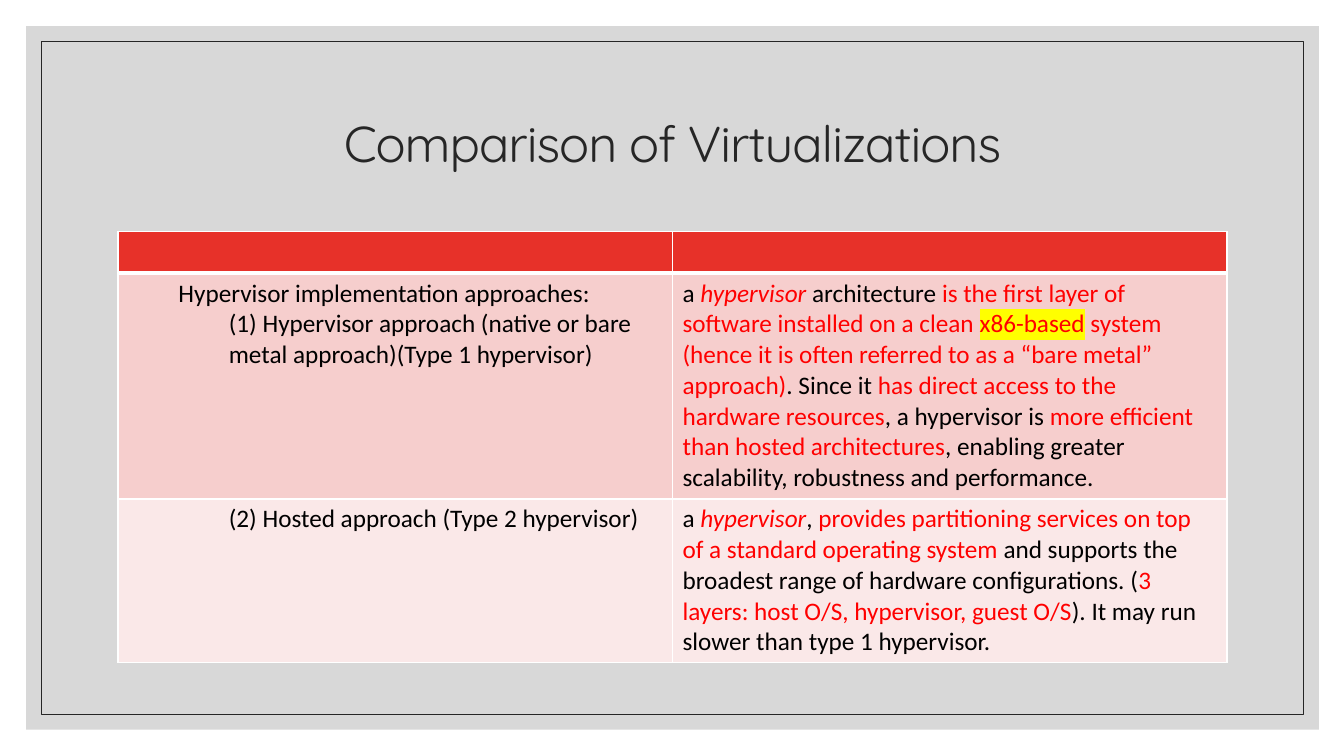
from dataclasses import dataclass

from lxml.etree import SubElement
from pptx import Presentation
from pptx.dml.color import RGBColor
from pptx.enum.shapes import MSO_SHAPE
from pptx.enum.text import MSO_ANCHOR, PP_ALIGN
from pptx.oxml.ns import qn
from pptx.util import Inches, Pt


@dataclass(frozen=True)
class Theme:
    """Colours, fonts and type sizes of the slide."""

    panel: str = "BFBFBF"
    ink: str = "262626"
    body: str = "000000"
    accent: str = "FF0000"
    highlight: str = "FFFF00"
    border: str = "FFFFFF"
    header_fill: str = "E73129"
    row_fills: tuple = ("F6CECD", "FAE8E8")
    title_font: str = "Quicksand"
    body_font: str = "Calibri"
    title_size: int = 36
    body_size: int = 18


PLAIN, RED, ITALIC, MARKED = "plain", "red", "italic", "marked"

APPROACHES = [
    (
        [
            (0.5, [("Hypervisor implementation approaches:", PLAIN)]),
            (1, [("(1) Hypervisor approach (native or bare metal approach)(Type 1 hypervisor)", PLAIN)]),
        ],
        [
            (0, [
                ("a ", PLAIN),
                ("hypervisor ", ITALIC),
                ("architecture ", PLAIN),
                ("is the first layer of software installed on a clean ", RED),
                ("x86-based", MARKED),
                (" system (hence it is often referred to as a “bare metal” approach)", RED),
                (". Since it ", PLAIN),
                ("has direct access to the hardware resources", RED),
                (", a hypervisor is ", PLAIN),
                ("more efficient than hosted architectures", RED),
                (", enabling greater scalability, robustness and performance.", PLAIN),
            ]),
        ],
    ),
    (
        [(1, [("(2) Hosted approach (Type 2 hypervisor)", PLAIN)])],
        [
            (0, [
                ("a ", PLAIN),
                ("hypervisor", ITALIC),
                (", ", PLAIN),
                ("provides partitioning services on top of a standard operating system ", RED),
                ("and supports the broadest range of hardware configurations. (", PLAIN),
                ("3 layers: host O/S, hypervisor, guest O/S", RED),
                ("). It may run slower than type 1 hypervisor.", PLAIN),
            ]),
        ],
    ),
]


class SlideBuilder:
    """Draws themed elements on the current slide."""

    def __init__(self, slide, theme):
        """Keep the slide and its theme."""
        self.slide = slide
        self.theme = theme

    def rectangle(self, left, top, width, height, fill=None, opacity=100, line=None):
        """Add a rectangle with an optional translucent fill and thin outline."""
        shape = self.slide.shapes.add_shape(
            MSO_SHAPE.RECTANGLE, Inches(left), Inches(top), Inches(width), Inches(height))
        shape.shadow.inherit = False
        if fill:
            shape.fill.solid()
            shape.fill.fore_color.rgb = RGBColor.from_string(fill)
            color = shape._element.spPr.find(qn("a:solidFill"))[0]
            SubElement(color, qn("a:alpha"), val=str(opacity * 1000))
        else:
            shape.fill.background()
        if line:
            shape.line.color.rgb = RGBColor.from_string(line)
            shape.line.width = Pt(0.5)
        else:
            shape.line.fill.background()

    def title(self, text, left, top, width, height):
        """Add the centred slide title."""
        shape = self.slide.shapes.add_textbox(
            Inches(left), Inches(top), Inches(width), Inches(height))
        frame = shape.text_frame
        frame.word_wrap = True
        frame.vertical_anchor = MSO_ANCHOR.MIDDLE
        paragraph = frame.paragraphs[0]
        paragraph.alignment = PP_ALIGN.CENTER
        paragraph.line_spacing = 0.9
        run = paragraph.add_run()
        run.text = text
        run.font.size = Pt(self.theme.title_size)
        run.font.color.rgb = RGBColor.from_string(self.theme.ink)
        run.font.name = self.theme.title_font
        run._r.get_or_add_rPr().set("spc", "-70")

    def body_run(self, paragraph, text, style):
        """Add one run of table text in the given style."""
        run = paragraph.add_run()
        run.text = text
        font = run.font
        font.size = Pt(self.theme.body_size)
        font.italic = style == ITALIC
        font.color.rgb = RGBColor.from_string(
            self.theme.body if style == PLAIN else self.theme.accent)
        if style == MARKED:
            highlight = SubElement(run._r.get_or_add_rPr(), qn("a:highlight"))
            SubElement(highlight, qn("a:srgbClr"), val=self.theme.highlight)
        font.name = self.theme.body_font

    def cell(self, cell, fill, paragraphs=(), top_border=1, bottom_border=1):
        """Set the borders, fill and indented paragraphs of a table cell."""
        properties = cell._tc.get_or_add_tcPr()
        borders = {"lnL": 1, "lnR": 1, "lnT": top_border, "lnB": bottom_border}
        for side, width in borders.items():
            line = SubElement(properties, qn(f"a:{side}"), w=str(Pt(width)))
            solid = SubElement(line, qn("a:solidFill"))
            SubElement(solid, qn("a:srgbClr"), val=self.theme.border)
        cell.fill.solid()
        cell.fill.fore_color.rgb = RGBColor.from_string(fill)
        frame = cell.text_frame
        for index, (indent, runs) in enumerate(paragraphs):
            paragraph = frame.add_paragraph() if index else frame.paragraphs[0]
            paragraph_properties = paragraph._p.get_or_add_pPr()
            paragraph_properties.set("marL", str(Inches(indent)))
            paragraph_properties.set("indent", "0")
            for text, style in runs:
                self.body_run(paragraph, text, style)

    def table(self, rows, left, top, width, heights):
        """Add a two-column table with an empty header row."""
        frame = self.slide.shapes.add_table(
            len(heights), 2, Inches(left), Inches(top), Inches(width), Inches(sum(heights)))
        table = frame.table
        for row, height in zip(table.rows, heights):
            row.height = Inches(height)
        for header in table.rows[0].cells:
            self.cell(header, self.theme.header_fill, bottom_border=3)
        for index, (contents, fill) in enumerate(zip(rows, self.theme.row_fills), 1):
            for cell, paragraphs in zip(table.rows[index].cells, contents):
                self.cell(cell, fill, paragraphs, top_border=3 if index == 1 else 1)


def main():
    """Build and save the presentation."""
    presentation = Presentation()
    presentation.slide_width = Inches(13.33)
    presentation.slide_height = Inches(7.5)
    slide = presentation.slides.add_slide(presentation.slide_layouts[6])
    theme = Theme()
    builder = SlideBuilder(slide, theme)
    builder.rectangle(0.26, 0.26, 12.82, 6.98, fill=theme.panel, opacity=60)
    builder.rectangle(0.41, 0.41, 12.52, 6.68, line=theme.ink)
    builder.title("Comparison of Virtualizations", 1.17, 0.7, 11, 1.5)
    builder.table(APPROACHES, 1.17, 2.3, 11, (0.41, 2.24, 1.62))
    presentation.save("out.pptx")


if __name__ == "__main__":
    main()
